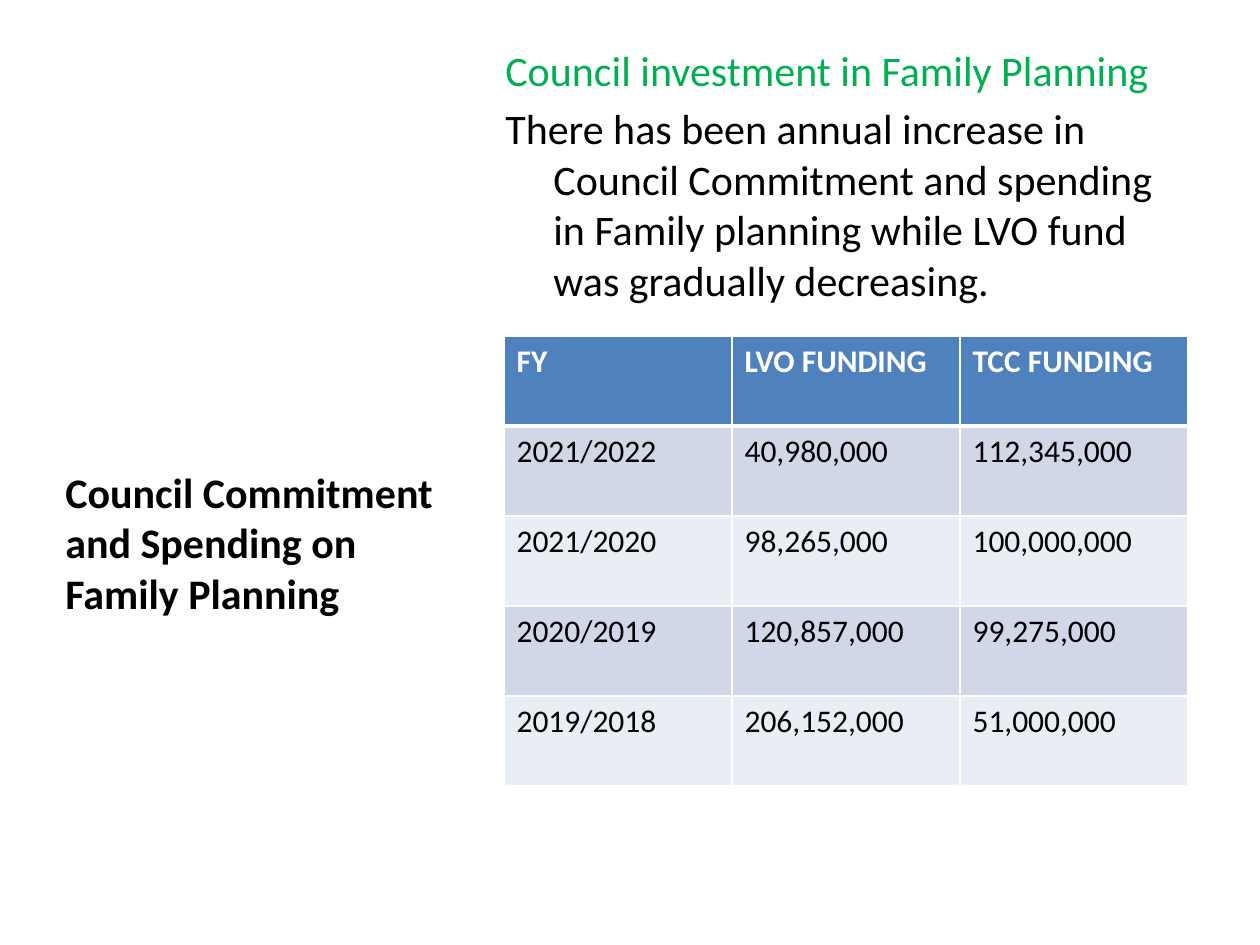
import dataclasses

import pptx
import pptx.dml.color
import pptx.enum.text
import pptx.oxml
import pptx.oxml.ns
import pptx.util


@dataclasses.dataclass(frozen=True)
class Theme:
    font: str = "Calibri"
    text_size: int = 24
    table_size: int = 18
    black: str = "000000"
    white: str = "FFFFFF"
    green: str = "00B050"
    header: str = "4F81BD"
    bands: tuple = ("D0D8E8", "E9EDF4")


THEME = Theme()
PX_PER_INCH = 126

FUNDING = [
    ("FY", "LVO FUNDING", "TCC FUNDING"),
    ("2021/2022", "40,980,000", "112,345,000"),
    ("2021/2020", "98,265,000", "100,000,000"),
    ("2020/2019", "120,857,000", "99,275,000"),
    ("2019/2018", "206,152,000", "51,000,000"),
]


def px(n):
    return pptx.util.Emu(round(n * 914400 / PX_PER_INCH))


def rgb(color):
    return pptx.dml.color.RGBColor.from_string(color)


def write(p, text, size=THEME.text_size, color=THEME.black, bold=False,
          hanging=0, before=0):
    """Put formatted text into a paragraph."""
    r = p.add_run()
    r.text = text
    r.font.name = THEME.font
    r.font.size = pptx.util.Pt(size)
    r.font.bold = bold
    r.font.color.rgb = rgb(color)
    if before:
        p.space_before = pptx.util.Pt(before)
    if hanging:
        pPr = p._p.get_or_add_pPr()
        pPr.set("marL", str(px(hanging)))
        pPr.set("indent", str(-px(hanging)))


def add_text_frame(slide, x, y, w, h, anchor):
    tf = slide.shapes.add_textbox(px(x), px(y), px(w), px(h)).text_frame
    tf.word_wrap = True
    tf.vertical_anchor = anchor
    return tf


def set_borders(cell, color, top_width, bottom_width):
    tcPr = cell._tc.get_or_add_tcPr()
    widths = {"lnL": 1, "lnR": 1, "lnT": top_width, "lnB": bottom_width}
    for i, (side, width) in enumerate(widths.items()):
        tcPr.insert(i, pptx.oxml.parse_xml(
            f'<a:{side} {pptx.oxml.ns.nsdecls("a")} w="{pptx.util.Pt(width)}">'
            f'<a:solidFill><a:srgbClr val="{color}"/></a:solidFill></a:{side}>'))


def add_table(slide, rows, x, y, col_w, row_h):
    n_rows, n_cols = len(rows), len(rows[0])
    table = slide.shapes.add_table(n_rows, n_cols, px(x), px(y),
                                   px(col_w * n_cols), px(row_h * n_rows)).table
    for i, row in enumerate(rows):
        is_header = i == 0
        fill = THEME.header if is_header else THEME.bands[(i - 1) % 2]
        for j, text in enumerate(row):
            cell = table.cell(i, j)
            cell.fill.solid()
            cell.fill.fore_color.rgb = rgb(fill)
            # The rule under the header is heavier, set on both rows
            set_borders(cell, THEME.white, top_width=3 if i == 1 else 1,
                        bottom_width=3 if is_header else 1)
            write(cell.text_frame.paragraphs[0], text, size=THEME.table_size,
                  color=THEME.white if is_header else THEME.black,
                  bold=is_header)


def main():
    prs = pptx.Presentation()
    prs.slide_width, prs.slide_height = px(1260), px(945)
    slide = prs.slides.add_slide(prs.slide_layouts[6])
    anchors = pptx.enum.text.MSO_ANCHOR

    # Title on the left
    tf = add_text_frame(slide, 53, 231, 415, 393, anchors.BOTTOM)
    write(tf.paragraphs[0], "Council Commitment and Spending on Family Planning",
          bold=True)

    # Heading and statement on the right
    tf = add_text_frame(slide, 493, 38, 704, 806, anchors.TOP)
    write(tf.paragraphs[0], "Council investment in Family Planning",
          color=THEME.green, hanging=48, before=4.8)
    write(tf.add_paragraph(),
          "There has been annual increase in Council Commitment and spending "
          "in Family planning while LVO fund was gradually decreasing.",
          hanging=48, before=4.8)

    # Funding by year
    add_table(slide, FUNDING, x=504, y=336, col_w=228, row_h=90)

    prs.save("out.pptx")


if __name__ == "__main__":
    main()
